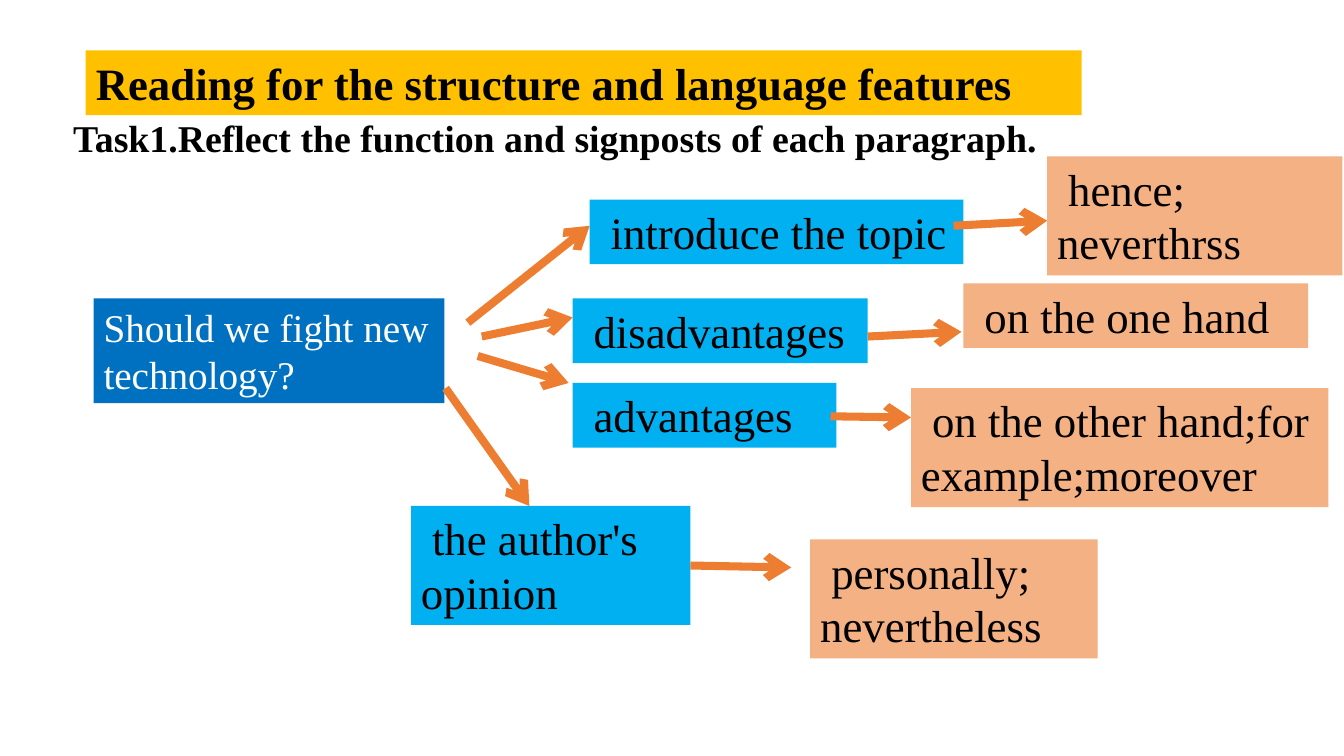
from dataclasses import dataclass

from lxml.etree import SubElement
from pptx import Presentation
from pptx.dml.color import RGBColor
from pptx.enum.shapes import MSO_CONNECTOR, MSO_SHAPE
from pptx.enum.text import MSO_ANCHOR, MSO_AUTO_SIZE, PP_ALIGN
from pptx.oxml.ns import qn
from pptx.util import Cm, Pt


@dataclass(frozen=True)
class Theme:
    font: str = "Times New Roman"
    banner: str = "FFC000"
    question: str = "0070C0"
    function: str = "00B0F0"
    signpost: str = "F4B183"
    arrow: str = "ED7D31"
    dark: str = "000000"
    light: str = "FFFFFF"
    large: float = 32
    medium: float = 28
    task: float = 27
    arrow_width: float = 5.75


@dataclass(frozen=True)
class Box:
    """A rectangle in centimetres."""
    left: float
    top: float
    width: float
    height: float

    def within(self, parent):
        return Box(parent.left + self.left, parent.top + self.top, self.width, self.height)

    def place(self, shape):
        shape.left, shape.top = Cm(self.left), Cm(self.top)
        shape.width, shape.height = Cm(self.width), Cm(self.height)


@dataclass(frozen=True)
class Branch:
    """A paragraph's function and signposts, with the arrows leading to each."""
    function: str
    function_box: Box
    entry: tuple
    signposts: tuple
    signpost_box: Box
    exit: tuple
    joined: bool = False


THEME = Theme()
ONE_LINE, TWO_LINES = 1.63, 3.0
FIRST_LINE_INDENT = 0.28

# Places below are relative to the diagram's box.
QUESTION_BOX = Box(0, 3.58, 8.84, 2.64)
BRANCHES = (
    Branch("introduce the topic", Box(12.5, 1.09, 9.42, ONE_LINE),
           ((9.43, 4.19), (12.5, 1.75)),
           ("hence;", "neverthrss"), Box(24.03, 0, 7.44, TWO_LINES),
           ((21.67, 1.75), (24.03, 1.62))),
    Branch("disadvantages", Box(12.07, 3.58, 7.44, ONE_LINE),
           ((9.78, 4.54), (12.07, 4.06)),
           ("on the one hand",), Box(21.92, 3.2, 8.69, ONE_LINE),
           ((19.51, 4.54), (21.87, 4.42))),
    Branch("advantages", Box(12.07, 5.71, 6.65, ONE_LINE),
           ((9.68, 5.03), (11.97, 5.71)),
           ("on the other hand;for example;moreover",), Box(20.6, 5.84, 10.52, TWO_LINES),
           ((18.57, 6.55), (20.6, 6.58))),
    Branch("the author's opinion", Box(8, 8.81, 7.04, TWO_LINES),
           ((8.87, 5.84), (10.98, 8.81)),
           ("personally;", "nevertheless"), Box(18.06, 9.65, 7.24, TWO_LINES),
           ((15.04, 10.28), (17.58, 10.36)), joined=True),
)


def fill_solid(shape, color):
    shape.fill.solid()
    shape.fill.fore_color.rgb = RGBColor.from_string(color)


def write(shape, lines, size, color=THEME.dark, bold=False, indent=0.0):
    """Write one paragraph per line; only the first one is indented."""
    frame = shape.text_frame
    frame.word_wrap = True
    frame.auto_size = MSO_AUTO_SIZE.NONE
    frame.vertical_anchor = MSO_ANCHOR.TOP
    for index, line in enumerate(lines):
        para = frame.add_paragraph() if index else frame.paragraphs[0]
        properties = para._p.get_or_add_pPr()
        properties.set("marL", "0")
        properties.set("indent", str(Cm(0 if index else indent)))
        SubElement(properties, qn("a:buNone"))
        para.alignment = PP_ALIGN.LEFT
        para.space_before = Pt(0)
        span = para.add_run()
        span.text = line
        span.font.name = THEME.font
        span.font.size = Pt(size)
        span.font.bold = bold
        span.font.color.rgb = RGBColor.from_string(color)


def add_banner(page, box):
    title = page.shapes.title
    box.place(title)
    fill_solid(title, THEME.banner)
    write(title, ["Reading for the structure and language features"], THEME.large, bold=True)


def add_task(page, box):
    body = page.placeholders[1]
    box.place(body)
    write(body, ["Task1.Reflect the function and signposts of each paragraph."],
          THEME.task, bold=True, indent=0.24)
    body.text_frame.paragraphs[0].line_spacing = 0.9


def add_panel(page, box, fill, lines, **text_format):
    panel = page.shapes.add_shape(MSO_SHAPE.RECTANGLE, 0, 0, 0, 0)
    box.place(panel)
    panel.shadow.inherit = False
    panel.line.fill.background()
    fill_solid(panel, fill)
    write(panel, lines, **text_format)
    return panel


def add_arrow(page, box, ends):
    (start_x, start_y), (end_x, end_y) = ends
    arrow = page.shapes.add_connector(
        MSO_CONNECTOR.STRAIGHT,
        Cm(box.left + start_x), Cm(box.top + start_y),
        Cm(box.left + end_x), Cm(box.top + end_y))
    arrow.line.width = Pt(THEME.arrow_width)
    arrow.line.color.rgb = RGBColor.from_string(THEME.arrow)
    SubElement(arrow.line._get_or_add_ln(), qn("a:tailEnd"), type="arrow")
    SubElement(arrow._element.spPr, qn("a:effectLst"))
    return arrow


def add_branch(page, box, branch):
    label_format = {"size": THEME.large, "indent": FIRST_LINE_INDENT}
    add_arrow(page, box, branch.entry)
    function = add_panel(page, branch.function_box.within(box), THEME.function,
                         [branch.function], **label_format)
    exit_arrow = add_arrow(page, box, branch.exit)
    if branch.joined:
        exit_arrow.begin_connect(function, 3)
    add_panel(page, branch.signpost_box.within(box), THEME.signpost,
              branch.signposts, **label_format)


def add_diagram(page, box):
    add_panel(page, QUESTION_BOX.within(box), THEME.question,
              ["Should we fight new technology?"], size=THEME.medium, color=THEME.light)
    for branch in BRANCHES:
        add_branch(page, box, branch)


def main():
    deck = Presentation()
    deck.slide_width, deck.slide_height = Cm(33.87), Cm(19.05)
    page = deck.slides.add_slide(deck.slide_layouts[1])
    add_banner(page, Box(2.16, 1.27, 25.1, ONE_LINE))
    add_task(page, Box(1.35, 2.9, 29.72, 2.79))
    add_diagram(page, Box(2.36, 3.94, 31.47, 12.65))
    deck.save("out.pptx")


if __name__ == "__main__":
    main()
